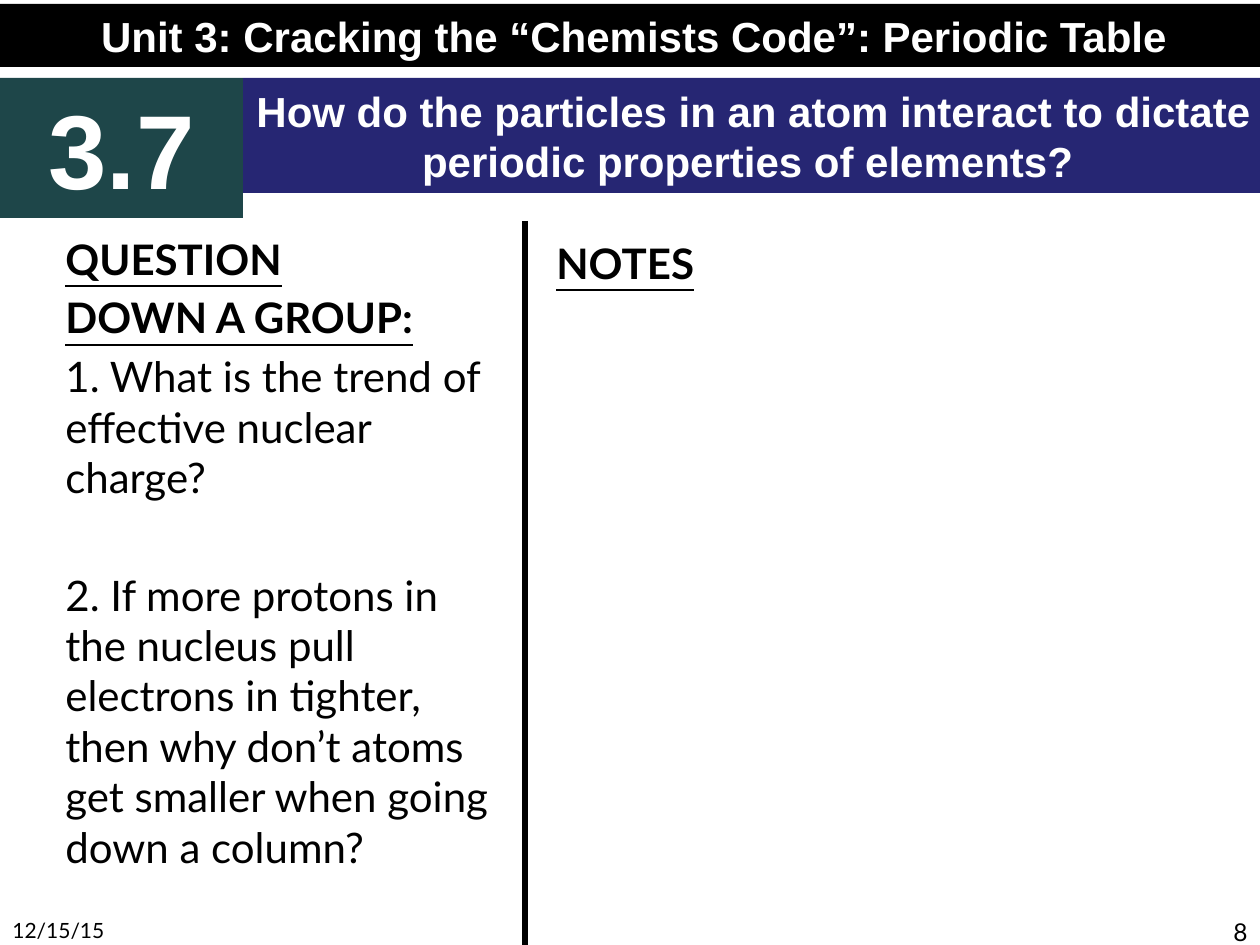
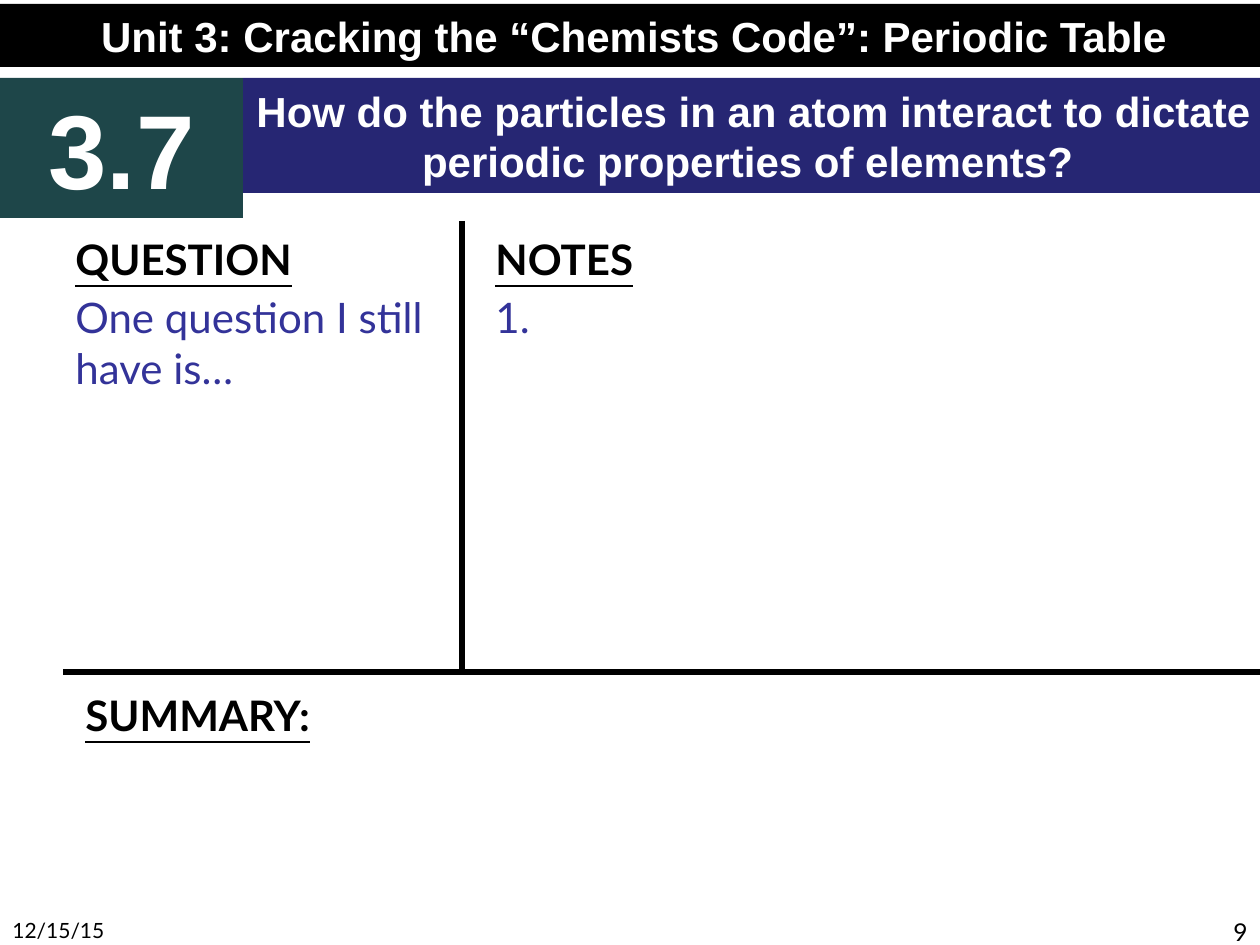
from lxml import etree
from pptx import Presentation
from pptx.dml.color import RGBColor
from pptx.enum.shapes import MSO_CONNECTOR, MSO_SHAPE
from pptx.enum.text import MSO_ANCHOR, MSO_AUTO_SIZE, PP_ALIGN
from pptx.oxml.ns import qn
from pptx.util import Emu, Pt

LEFT, CENTER, RIGHT = PP_ALIGN.LEFT, PP_ALIGN.CENTER, PP_ALIGN.RIGHT
TOP, MIDDLE = MSO_ANCHOR.TOP, MSO_ANCHOR.MIDDLE
RECT, STRAIGHT = MSO_SHAPE.RECTANGLE, MSO_CONNECTOR.STRAIGHT
NO_AUTOFIT = MSO_AUTO_SIZE.NONE

# Shared measures and style
EMU_PER_PX = 914400 / 126
W, H = 1260, 945
BAND_FONT, BODY_FONT = "Arial", "Lato"
BLACK, WHITE, TEAL, NAVY, INDIGO = "000000", "FFFFFF", "1E4649", "262673", "333399"
PARA_GAP = 4.8
QUESTION_GAP = 38.4
UNIT = "Unit 3: Cracking the “Chemists Code”: Periodic Table"
LESSON = "3.7"
# The closing space belongs to the centred second line
QUESTION = "How do the particles in an atom interact to dictate periodic properties of elements? "
DATE = "12/15/15"


def px(n):
    return Emu(round(n * EMU_PER_PX))


def rgb(color):
    return RGBColor.from_string(color)


def style(p, size, color=BLACK, font=BODY_FONT, bold=False, underline=False, align=LEFT):
    p.alignment = align
    f = p.font
    f.name, f.size, f.bold, f.underline = font, Pt(size), bold, underline
    f.color.rgb = rgb(color)


def set_frame(tf, anchor):
    tf.word_wrap = True
    tf.auto_size = NO_AUTOFIT
    tf.vertical_anchor = anchor


def format_band(sp, fill, text, size):
    sp.fill.solid()
    sp.fill.fore_color.rgb = rgb(fill)
    sp.line.fill.background()
    tf = sp.text_frame
    set_frame(tf, MIDDLE)
    tf.text = text
    style(tf.paragraphs[0], size, WHITE, BAND_FONT, bold=True, align=CENTER)


def add_band(s, box, fill, text, size):
    sp = s.shapes.add_shape(RECT, *map(px, box))
    sp.shadow.inherit = False
    format_band(sp, fill, text, size)


def add_text(s, box):
    tf = s.shapes.add_textbox(*map(px, box)).text_frame
    set_frame(tf, TOP)
    return tf


def add_rule(s, x1, y1, x2, y2):
    line = s.shapes.add_connector(STRAIGHT, px(x1), px(y1), px(x2), px(y2))
    line.line.color.rgb = rgb(BLACK)
    line.line.width = Pt(3)
    etree.SubElement(line._element.spPr, qn("a:effectLst"))


def add_header(s, x, y):
    """Unit bar, lesson number and essential question."""
    number_w, lesson_y = 243, y + 74
    add_band(s, (x, y, 1268, 63), BLACK, UNIT, 24)
    add_band(s, (x, lesson_y, number_w, 140), TEAL, LESSON, 60)
    title = s.shapes.title
    title.left, title.top = px(x + number_w), px(lesson_y)
    title.width, title.height = px(1021), px(115)
    format_band(title, NAVY, QUESTION, 24)


def add_footer(s, number):
    """Date at the left edge, slide number at the right edge."""
    w, h = 294, 34
    for x, text, size, align in ((0, DATE, 12, LEFT), (W - w, str(number), 14, RIGHT)):
        p = add_text(s, (x, H - h, w, h)).paragraphs[0]
        p.text = text
        style(p, size, align=align)


def add_section(s, box, headings, items=(), color=BLACK, item_gap=PARA_GAP):
    """Underlined headings followed by plain items."""
    tf = add_text(s, box)
    for i, text in enumerate([*headings, *items]):
        is_heading = i < len(headings)
        p = tf.add_paragraph() if i else tf.paragraphs[0]
        p.text = text
        style(p, 24, BLACK if is_heading else color, bold=is_heading, underline=is_heading)
        if i:
            p.space_before = Pt(item_gap if i > len(headings) else PARA_GAP)


def add_lesson_slide(prs, number):
    s = prs.slides.add_slide(prs.slide_layouts[5])
    add_header(s, 0, 4)
    add_footer(s, number)
    return s


def add_group_trend_slide(prs):
    s = add_lesson_slide(prs, 8)
    add_rule(s, 525, 221, 525, H)
    add_section(s, (53, 227, 462, 624), ["QUESTION", "DOWN A GROUP:"], [
        "1. What is the trend of effective nuclear charge?",
        "2. If more protons in the nucleus pull electrons in tighter, "
        "then why don’t atoms get smaller when going down a column?",
    ], item_gap=QUESTION_GAP)
    add_section(s, (544, 231, 714, 624), ["NOTES"])


def add_summary_slide(prs):
    s = add_lesson_slide(prs, 9)
    split_x, split_y, top, left = 462, 672, 227, 63
    add_section(s, (left, top, 399, 435), ["QUESTION"], ["One question I still have is…"], INDIGO)
    add_section(s, (483, top, W - 483, 435), ["NOTES"], ["1."], INDIGO)
    add_section(s, (73, 683, W - 73, H - 683), ["SUMMARY:"])
    add_rule(s, split_x, 221, split_x, split_y)
    add_rule(s, W, split_y, left, split_y)


def main():
    prs = Presentation()
    prs.slide_width, prs.slide_height = px(W), px(H)
    add_group_trend_slide(prs)
    add_summary_slide(prs)
    prs.save("out.pptx")


if __name__ == "__main__":
    main()
